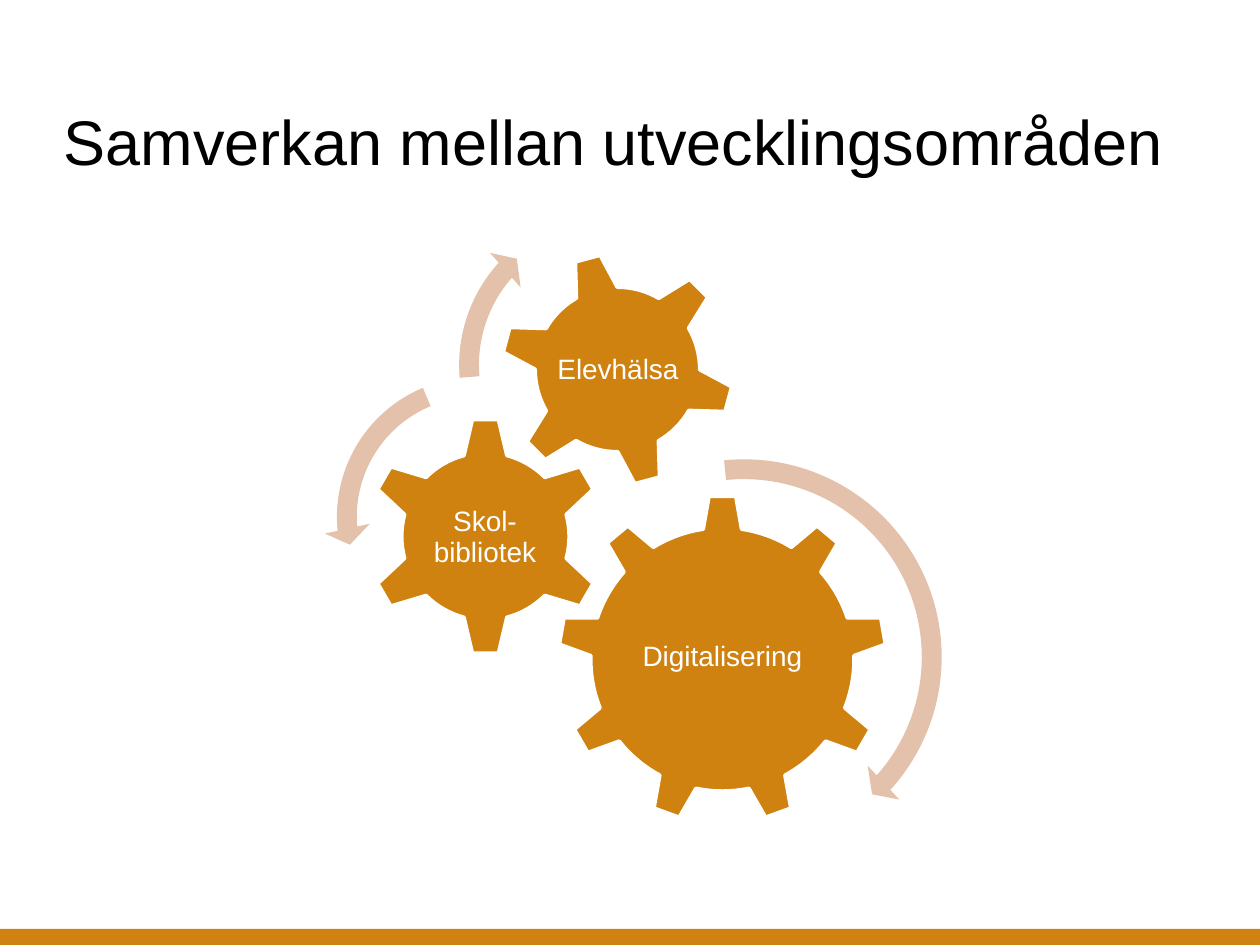
from dataclasses import dataclass

from pptx import Presentation
from pptx.dml.color import RGBColor
from pptx.enum.shapes import MSO_SHAPE
from pptx.enum.text import MSO_ANCHOR, PP_ALIGN
from pptx.util import Emu, Pt

PX = 914400 // 126
RECTANGLE = MSO_SHAPE.RECTANGLE
GEAR_6 = MSO_SHAPE.GEAR_6
GEAR_9 = MSO_SHAPE.GEAR_9
CLOCKWISE = MSO_SHAPE.CIRCULAR_ARROW
COUNTERCLOCKWISE = MSO_SHAPE.LEFT_CIRCULAR_ARROW
LEFT, CENTER = PP_ALIGN.LEFT, PP_ALIGN.CENTER
MIDDLE, BOTTOM = MSO_ANCHOR.MIDDLE, MSO_ANCHOR.BOTTOM


@dataclass(frozen=True)
class Theme:
    font: str = "Arial"
    title_size: int = 36
    label_size: int = 16
    accent: str = "CF820F"
    arrow: str = "E4C1AB"
    text: str = "000000"
    light: str = "FFFFFF"


class SlideBuilder:
    def __init__(self, slide, theme):
        self.slide = slide
        self.theme = theme

    def shape(self, kind, left, top, width, height, fill):
        shape = self.slide.shapes.add_shape(
            kind, *(Emu(length * PX) for length in (left, top, width, height)))
        shape.shadow.inherit = False
        shape.fill.solid()
        shape.fill.fore_color.rgb = RGBColor.from_string(fill)
        shape.line.fill.background()
        return shape

    def text(self, content, left, top, width, height, size, color,
             align, anchor, spacing, inset=0):
        box = self.slide.shapes.add_textbox(
            *(Emu(length * PX) for length in (left, top, width, height)))
        frame = box.text_frame
        frame.word_wrap = True
        frame.vertical_anchor = anchor
        frame.margin_left = frame.margin_right = Emu(inset * PX)
        frame.margin_top = frame.margin_bottom = Emu(inset * PX)
        paragraph = frame.paragraphs[0]
        paragraph.alignment = align
        paragraph.line_spacing = spacing
        run = paragraph.add_run()
        run.text = content
        run.font.name = self.theme.font
        run.font.size = Pt(size)
        run.font.color.rgb = RGBColor.from_string(color)

    def title(self, content):
        self.text(content, 64, 39, 1131, 139, self.theme.title_size,
                  self.theme.text, LEFT, BOTTOM, Pt(40))

    def gear(self, kind, left, top, size, label, label_box, rotation=0):
        gear = self.shape(kind, left, top, size, size, self.theme.accent)
        gear.line.color.rgb = RGBColor.from_string(self.theme.light)
        gear.line.width = Pt(2)
        gear.rotation = rotation
        self.text(label, *label_box, self.theme.label_size, self.theme.light,
                  CENTER, MIDDLE, 0.9, inset=3)

    def arc_arrow(self, kind, left, top, size, adjustments):
        arrow = self.shape(kind, left, top, size, size, self.theme.arrow)
        for index, value in enumerate(adjustments):
            arrow.adjustments[index] = value


def main():
    presentation = Presentation()
    presentation.slide_width = Emu(1260 * PX)
    presentation.slide_height = Emu(945 * PX)
    slide = presentation.slides.add_slide(presentation.slide_layouts[6])
    theme = Theme()
    builder = SlideBuilder(slide, theme)

    builder.shape(RECTANGLE, 0, 929, 1260, 16, theme.accent)
    builder.title("Samverkan mellan utvecklingsområden")

    builder.gear(GEAR_9, 558, 495, 329, "Digitalisering", (624, 573, 197, 169))
    builder.gear(GEAR_6, 366, 417, 239, "Skol-bibliotek", (426, 479, 118, 118))
    builder.gear(GEAR_6, 500, 252, 235, "Elevhälsa", (552, 304, 132, 132),
                 rotation=345)

    # Adjustments: thickness, head angle, end angle, start angle, head width
    builder.arc_arrow(CLOCKWISE, 533, 446, 422,
                      (0.047, 2.99, 25.2, 158.54, 0.055))
    builder.arc_arrow(COUNTERCLOCKWISE, 324, 364, 306,
                      (0.065, 4.3, 104.89, 148.38, 0.075))
    builder.arc_arrow(CLOCKWISE, 446, 200, 330,
                      (0.06, 3.94, 133.14, 105.08, 0.07))

    presentation.save("out.pptx")


if __name__ == "__main__":
    main()
